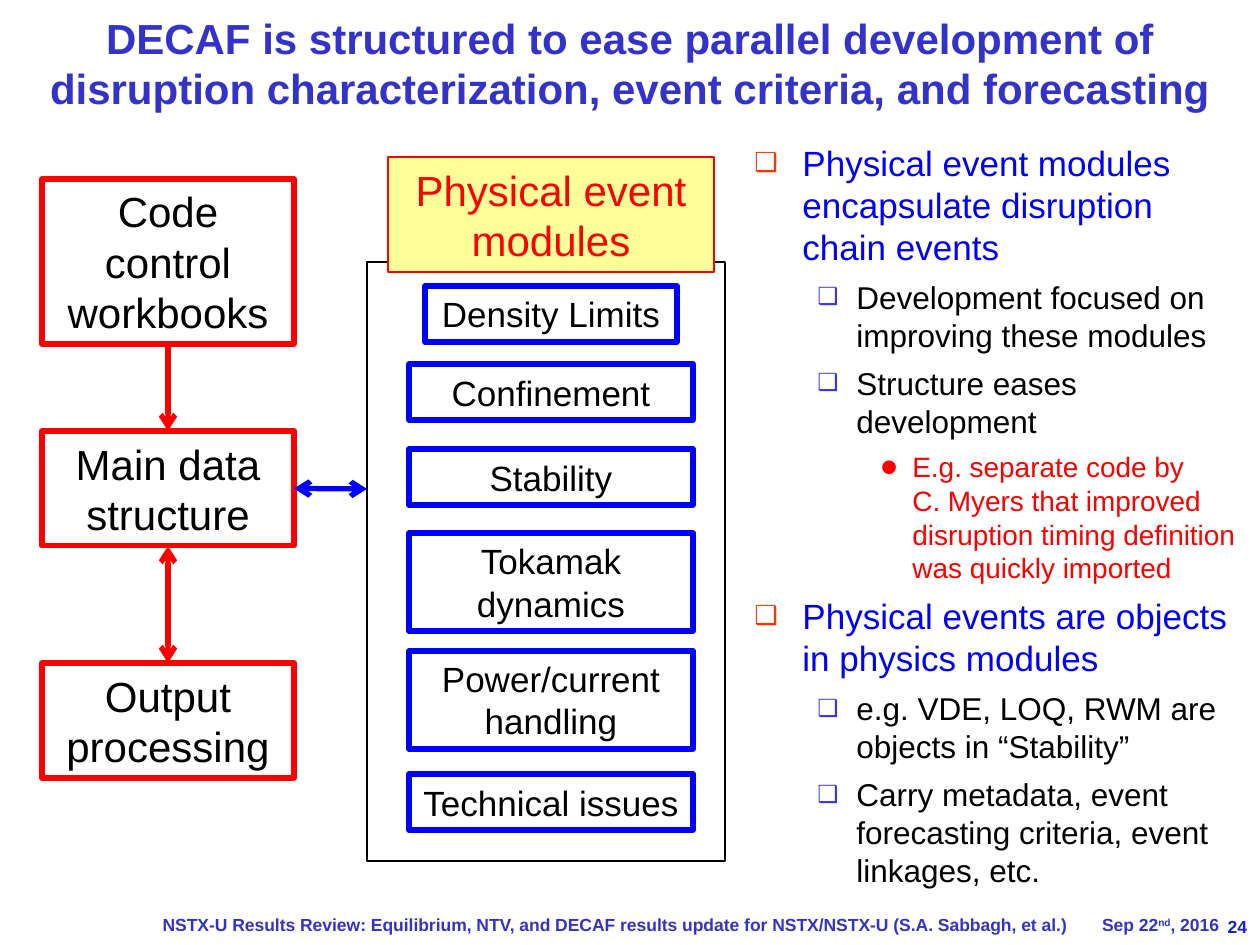
import pptx
import pptx.dml.color
import pptx.enum.shapes
import pptx.enum.text
import pptx.oxml
import pptx.oxml.ns
import pptx.util

PX = 914400 / 126
RED = pptx.dml.color.RGBColor(0xFF, 0x00, 0x00)
BLUE = pptx.dml.color.RGBColor(0x00, 0x00, 0xFF)
BLACK = pptx.dml.color.RGBColor(0x00, 0x00, 0x00)
YELLOW = pptx.dml.color.RGBColor(0xFF, 0xFF, 0x99)
INDIGO = pptx.dml.color.RGBColor(0x33, 0x33, 0xCC)
PAGE_BLUE = pptx.dml.color.RGBColor(0x18, 0x22, 0xCD)
ALIGN = pptx.enum.text.PP_ALIGN
MIDDLE = pptx.enum.text.MSO_ANCHOR.MIDDLE
RECTANGLE = pptx.enum.shapes.MSO_SHAPE.RECTANGLE
STRAIGHT = pptx.enum.shapes.MSO_CONNECTOR.STRAIGHT
NAMESPACE = pptx.oxml.ns.nsdecls("a")

presentation = pptx.Presentation()
presentation.slide_width = round(1260 * PX)
presentation.slide_height = round(945 * PX)
slide = presentation.slides.add_slide(presentation.slide_layouts[6])


def format_runs(paragraph, size, color, bold=False):
    for run in paragraph.runs:
        run.font.name = "Arial"
        run.font.size = pptx.util.Pt(size)
        run.font.bold = bold
        run.font.color.rgb = color


def add_box(text, bounds, line_color, line_width, size, text_color=BLACK):
    shape = slide.shapes.add_shape(RECTANGLE, *[round(value * PX) for value in bounds])
    shape.shadow.inherit = False
    shape.fill.background()
    shape.line.color.rgb = line_color
    shape.line.width = pptx.util.Pt(line_width)
    if text:
        shape.text_frame.text = text
        shape.text_frame.word_wrap = True
        shape.text_frame.vertical_anchor = MIDDLE
        paragraph = shape.text_frame.paragraphs[0]
        paragraph.alignment = ALIGN.CENTER
        format_runs(paragraph, size, text_color)
    return shape


labels = [
    (["24"], (966, 902, 294, 50), 13, ALIGN.RIGHT, 10, PAGE_BLUE),
    (["NSTX-U Results Review: Equilibrium, NTV, and DECAF results update for NSTX/NSTX-U (S.A. Sabbagh, et al.)"],
     (121, 906, 987, 38), 0, ALIGN.CENTER, 10, INDIGO),
    (["Sep 22", "nd", ", 2016"], (946, 906, 273, 38), 0, ALIGN.RIGHT, 10, INDIGO),
    (["DECAF is structured to ease parallel development of disruption characterization, event criteria, and forecasting"],
     (0, 0, 1260, 126), 13, ALIGN.CENTER, 24, INDIGO),
]
for parts, bounds, inset, alignment, size, color in labels:
    label = slide.shapes.add_textbox(*[round(value * PX) for value in bounds])
    frame = label.text_frame
    frame.word_wrap = True
    frame.vertical_anchor = MIDDLE
    frame.margin_left = frame.margin_right = round(inset * PX)
    frame.margin_top = frame.margin_bottom = round(inset * PX / 2)
    paragraph = frame.paragraphs[0]
    paragraph.alignment = alignment
    for part in parts:
        run = paragraph.add_run()
        run.text = part
        if part == "nd":
            run.font._element.set("baseline", "30000")
    format_runs(paragraph, size, color, bold=True)

levels = [
    (20, BLUE, 48, 48, "❑", "FF3300", 75),
    (18, BLACK, 102, 39, "❑", "3333FF", 75),
    (16, RED, 158, 32, "•", "FF0000", 180),
]
points = [
    (0, "Physical event modules encapsulate disruption chain events"),
    (1, "Development focused on improving these modules"),
    (1, "Structure eases development"),
    (2, "E.g. separate code by\vC. Myers that improved disruption timing definition was quickly imported"),
    (0, "Physical events are objects in physics modules"),
    (1, "e.g. VDE, LOQ, RWM are objects in “Stability”"),
    (1, "Carry metadata, event forecasting criteria, event linkages, etc."),
]
body = slide.shapes.add_textbox(*[round(value * PX) for value in (742, 135, 510, 760)])
body.text_frame.word_wrap = True
for index, (level, text) in enumerate(points):
    size, color, margin, hanging, bullet, bullet_color, bullet_size = levels[level]
    paragraph = body.text_frame.paragraphs[0] if index == 0 else body.text_frame.add_paragraph()
    paragraph.text = text
    paragraph.level = level
    properties = paragraph._p.get_or_add_pPr()
    properties.set("marL", str(round(margin * PX)))
    properties.set("indent", str(round(-hanging * PX)))
    for element in (
        f'<a:buClr {NAMESPACE}><a:srgbClr val="{bullet_color}"/></a:buClr>',
        f'<a:buSzPct {NAMESPACE} val="{bullet_size * 1000}"/>',
        f'<a:buFont {NAMESPACE} typeface="Arial"/>',
        f'<a:buChar {NAMESPACE} char="{bullet}"/>',
    ):
        properties.append(pptx.oxml.parse_xml(element))
    paragraph.space_before = pptx.util.Pt(6 if index else 0)
    format_runs(paragraph, size, color)

workbooks, data_structure, output = [
    add_box(text, (42, top, 252, height), RED, 3, 24)
    for text, top, height in [
        ("Code control workbooks", 179, 165),
        ("Main data structure", 431, 115),
        ("Output processing", 663, 115),
    ]
]

modules_center = 551
for text, top, width, height in [
    ("Density Limits", 286, 252, 56),
    ("Confinement", 364, 284, 56),
    ("Stability", 449, 284, 56),
    ("Tokamak dynamics", 533, 284, 98),
    ("Power/current handling", 651, 284, 98),
    ("Technical issues", 774, 284, 56),
]:
    add_box(text, (modules_center - width / 2, top, width, height), BLUE, 3, 20)

add_box("", (367, 262, 358, 599), BLACK, 1.25, 20)
header = add_box("Physical event modules", (388, 157, 326, 115), RED, 0.75, 24, RED)
header.fill.solid()
header.fill.fore_color.rgb = YELLOW

for start, start_site, end, end_site, points_px, color, ends in [
    (workbooks, 2, data_structure, 0, (168, 344, 168, 431), RED, ["tailEnd"]),
    (data_structure, 2, output, 0, (168, 546, 168, 663), RED, ["headEnd", "tailEnd"]),
    (None, None, data_structure, 3, (367, 489, 294, 489), BLUE, ["headEnd", "tailEnd"]),
]:
    connector = slide.shapes.add_connector(STRAIGHT, *[round(value * PX) for value in points_px])
    if start is not None:
        connector.begin_connect(start, start_site)
    end_shape = end
    connector.end_connect(end_shape, end_site)
    connector.line.color.rgb = color
    connector.line.width = pptx.util.Pt(3)
    line = connector.line._get_or_add_ln()
    for arrow_end in ends:
        line.append(pptx.oxml.parse_xml(f'<a:{arrow_end} {NAMESPACE} type="arrow"/>'))
    connector._element.spPr.append(pptx.oxml.parse_xml(f"<a:effectLst {NAMESPACE}/>"))

presentation.save("out.pptx")
